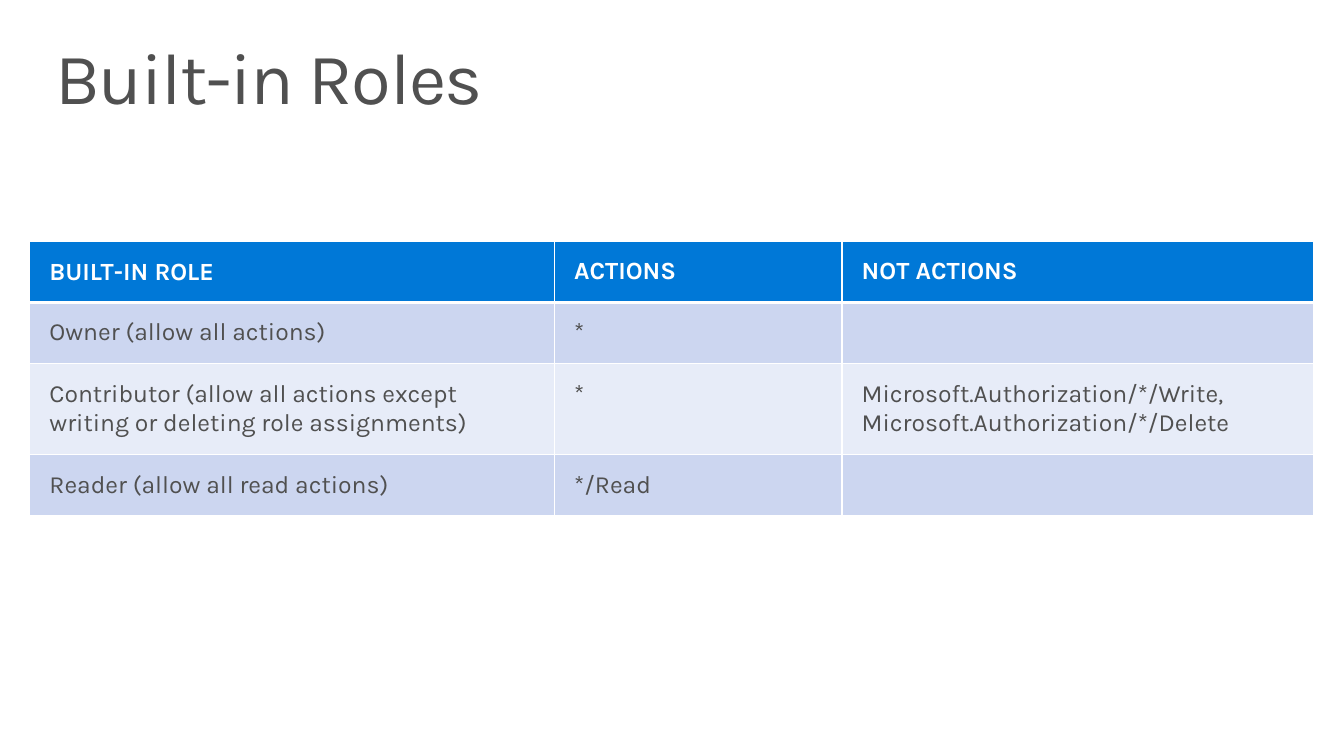
from lxml import etree
from pptx import Presentation
from pptx.dml.color import RGBColor
from pptx.enum import text
from pptx.oxml import ns
from pptx.util import Inches, Pt

# Content
TITLE = "Built-in Roles"
ROLES = [
    ("BUILT-IN ROLE", "ACTIONS", "NOT ACTIONS"),
    ("Owner (allow all actions)", "*", ""),
    ("Contributor (allow all actions except writing or deleting role assignments)",
     "*", "Microsoft.Authorization/*/Write, Microsoft.Authorization/*/Delete"),
    ("Reader (allow all read actions)", "*/Read", ""),
]
COL_WIDTHS = (5.31, 2.91, 4.77)
ROW_HEIGHTS = (0.62, 0.62, 0.92, 0.62)

# Style
FONT = "Karla"
GREY = RGBColor(0x50, 0x50, 0x50)
WHITE = RGBColor(0xFF, 0xFF, 0xFF)
BLUE = RGBColor(0x00, 0x78, 0xD7)
BANDS = (RGBColor(0xE7, 0xEC, 0xF8), RGBColor(0xCC, 0xD6, 0xF0))


def style_run(r, size, color, bold=False):
    r.font.name = FONT
    r.font.size = Pt(size)
    r.font.color.rgb = color
    r.font.bold = bold


def set_margins(box, side, top):
    box.margin_left = box.margin_right = Inches(side)
    box.margin_top = box.margin_bottom = Inches(top)


def set_borders(cell, widths):
    """Draw white borders; widths maps each side to points."""
    tcPr = cell._tc.get_or_add_tcPr()
    for i, (side, width) in enumerate(widths.items()):
        ln = etree.Element(ns.qn("a:ln" + side), w=str(Pt(width)))
        fill = etree.SubElement(ln, ns.qn("a:solidFill"))
        etree.SubElement(fill, ns.qn("a:srgbClr"), val=str(WHITE))
        tcPr.insert(i, ln)


prs = Presentation()
prs.slide_width, prs.slide_height = Inches(13.6), Inches(7.65)
s = prs.slides.add_slide(prs.slide_layouts[6])

# Title
tf = s.shapes.add_textbox(Inches(0.4), Inches(0.32), Inches(12.8), Inches(1)).text_frame
tf.word_wrap = True
set_margins(tf, 0.16, 0.1)
tf.text = TITLE
p = tf.paragraphs[0]
p.line_spacing = 0.9
style_run(p.runs[0], 52.8, GREY)
p.runs[0].font._element.set("spc", "-100")

# Roles table
table = s.shapes.add_table(len(ROLES), len(COL_WIDTHS), Inches(0.3), Inches(2.44),
                           Inches(sum(COL_WIDTHS)), Inches(sum(ROW_HEIGHTS))).table
for column, width in zip(table.columns, COL_WIDTHS):
    column.width = Inches(width)
for row, height in zip(table.rows, ROW_HEIGHTS):
    row.height = Inches(height)

for i, role in enumerate(ROLES):
    header = i == 0
    for j, words in enumerate(role):
        cell = table.cell(i, j)
        cell.fill.solid()
        cell.fill.fore_color.rgb = BLUE if header else BANDS[i % 2]
        set_borders(cell, {"L": 1, "R": 1, "T": 3 if i == 1 else 1, "B": 3 if header else 1})
        set_margins(cell, 0.2, 0.16)
        if words:
            cell.text_frame.text = words
            style_run(cell.text_frame.paragraphs[0].runs[0], 18,
                      WHITE if header else GREY, header)
table.cell(0, 0).vertical_anchor = text.MSO_ANCHOR.MIDDLE

prs.save("out.pptx")
